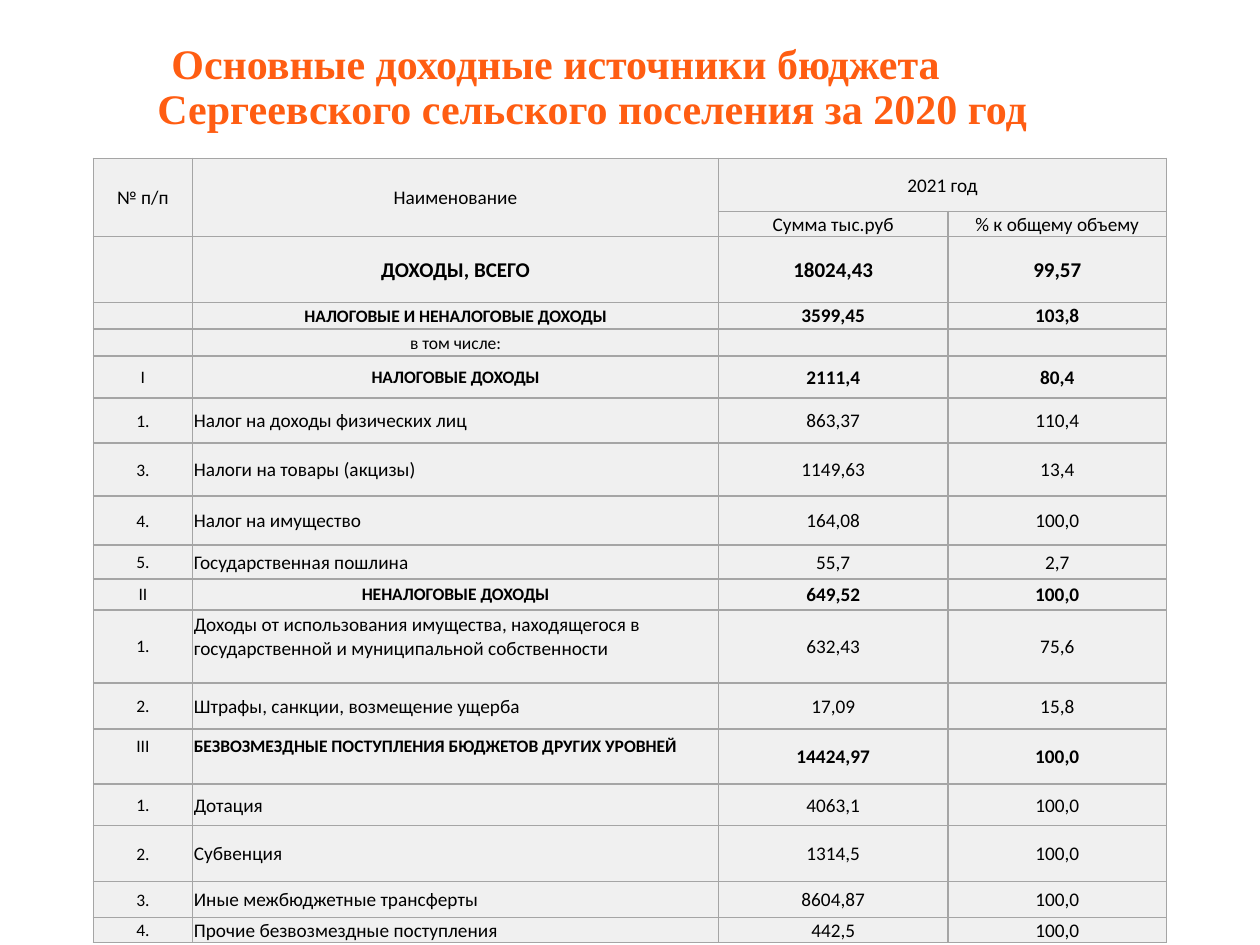
from lxml import etree
from pptx import Presentation
from pptx import util as u
from pptx.dml.color import RGBColor
from pptx.enum import text
from pptx.oxml import ns

ORANGE = RGBColor(0xFF, 0x5D, 0x12)
BLACK = RGBColor(0, 0, 0)
CELL_GREY = RGBColor(0xF0, 0xF0, 0xF0)
BORDER_GREY = RGBColor(0xA5, 0xA5, 0xA5)
LEFT, CENTER = text.PP_ALIGN.LEFT, text.PP_ALIGN.CENTER

COLUMN_WIDTHS = [56.8, 300.5, 131.2, 124.9]
HEADER_HEIGHTS = [30.3, 14.3]

# kind: (name size, value size, bold, name alignment)
KINDS = {
    "total": (12, 12, True, CENTER),
    "group": (10, 11, True, CENTER),
    "note": (10, 10, False, CENTER),
    "section": (10, 11, True, LEFT),
    "item": (11, 11, False, LEFT),
}

# kind, row height, number, name, sum, percentage
INCOME = [
    ("total", 37.7, "", "ДОХОДЫ, ВСЕГО", "18024,43", "99,57"),
    ("group", 15.4, "", "НАЛОГОВЫЕ И НЕНАЛОГОВЫЕ ДОХОДЫ", "3599,45", "103,8"),
    ("note", 15.4, "", "в том числе:", "", ""),
    ("group", 24, "I", "НАЛОГОВЫЕ ДОХОДЫ", "2111,4", "80,4"),
    ("item", 25.7, "1.", "Налог на доходы физических лиц", "863,37", "110,4"),
    ("item", 30.3, "3.", "Налоги на товары (акцизы)", "1149,63", "13,4"),
    ("item", 28, "4.", "Налог на имущество", "164,08", "100,0"),
    ("item", 19.4, "5.", "Государственная пошлина", "55,7", "2,7"),
    ("group", 17.7, "II", "НЕНАЛОГОВЫЕ ДОХОДЫ", "649,52", "100,0"),
    ("item", 41.7, "1.", "Доходы от использования имущества, находящегося в "
     "государственной и муниципальной собственности", "632,43", "75,6"),
    ("item", 26.3, "2.", "Штрафы, санкции, возмещение ущерба", "17,09", "15,8"),
    ("section", 31.4, "III", "БЕЗВОЗМЕЗДНЫЕ ПОСТУПЛЕНИЯ БЮДЖЕТОВ ДРУГИХ УРОВНЕЙ",
     "14424,97", "100,0"),
    ("item", 24, "1.", "Дотация", "4063,1", "100,0"),
    ("item", 32, "2.", "Субвенция", "1314,5", "100,0"),
    ("item", 20.6, "3.", "Иные межбюджетные трансферты", "8604,87", "100,0"),
    ("item", 14.3, "4.", "Прочие безвозмездные поступления", "442,5", "100,0"),
]
# (row, column) of cells whose text sits above the middle
RAISED = {(11, 1), (13, 0), (13, 1)}


class Deck:
    title_font = "Times New Roman"
    body_font = "Calibri"

    def __init__(self, prs):
        self.s = prs.slides.add_slide(prs.slide_layouts[6])

    def run(self, p, content, font, size, color, bold=False):
        r = p.add_run()
        r.text = content
        r.font.name, r.font.size, r.font.bold = font, u.Pt(size), bold
        r.font.color.rgb = color

    def title(self, left, top, width, height, content, first_indent):
        tf = self.s.shapes.add_textbox(*map(u.Pt, (left, top, width, height))).text_frame
        tf.word_wrap = True
        tf.margin_left = 0
        p = tf.paragraphs[0]
        p.alignment, p.line_spacing = LEFT, 0.9
        p._p.get_or_add_pPr().set("indent", str(u.Pt(first_indent)))
        self.run(p, content, self.title_font, 24, ORANGE, True)

    def table(self, left, top, widths, heights):
        """Add a plain table with every cell filled and bordered."""
        frame = self.s.shapes.add_table(len(heights), len(widths), *map(
            u.Pt, (left, top, sum(widths), sum(heights))))
        table = frame.table
        table.first_row = table.horz_banding = False
        for column, width in zip(table.columns, widths):
            column.width = u.Pt(width)
        for row, height in zip(table.rows, heights):
            row.height = u.Pt(height)
        for cell in table.iter_cells():
            self.borders(cell)
            cell.fill.solid()
            cell.fill.fore_color.rgb = CELL_GREY
            cell.vertical_anchor = text.MSO_ANCHOR.MIDDLE
            cell.margin_left = cell.margin_right = cell.margin_top = u.Pt(0.7)
            cell.margin_bottom = 0
        return table

    def borders(self, cell):
        tc_pr = cell._tc.get_or_add_tcPr()
        for side in ("lnL", "lnR", "lnT", "lnB"):
            line = etree.SubElement(tc_pr, ns.qn("a:" + side), w=str(u.Pt(1)))
            fill = etree.SubElement(line, ns.qn("a:solidFill"))
            etree.SubElement(fill, ns.qn("a:srgbClr"), val=str(BORDER_GREY))

    def cell_text(self, cell, content, size=11, bold=False, align=CENTER):
        p = cell.text_frame.paragraphs[0]
        p.alignment = align
        if content:
            self.run(p, content, self.body_font, size, BLACK, bold)
        else:  # keeps an empty cell from stretching its row
            end = etree.SubElement(p._p, ns.qn("a:endParaRPr"))
            end.set("sz", str(size * 100))


def main():
    prs = Presentation()
    prs.slide_width, prs.slide_height = u.Pt(720), u.Pt(540)
    deck = Deck(prs)
    deck.title(90, 21, 565, 465, "Основные доходные источники бюджета "
               "Сергеевского сельского поселения за 2020 год", 8)

    heights = HEADER_HEIGHTS + [row[1] for row in INCOME]
    table = deck.table(53.3, 90.5, COLUMN_WIDTHS, heights)
    for first, last in (((0, 0), (1, 0)), ((0, 1), (1, 1)), ((0, 2), (0, 3))):
        table.cell(*first).merge(table.cell(*last))
    headers = {(0, 0): "№ п/п", (0, 1): "Наименование", (0, 2): "2021 год",
               (1, 2): "Сумма тыс.руб", (1, 3): "% к общему объему"}
    for position, content in headers.items():
        deck.cell_text(table.cell(*position), content)

    for i, (kind, _, number, name, *values) in enumerate(INCOME, len(HEADER_HEIGHTS)):
        name_size, value_size, bold, align = KINDS[kind]
        deck.cell_text(table.cell(i, 0), number, 10)
        deck.cell_text(table.cell(i, 1), name, name_size, bold, align)
        for j, value in enumerate(values, 2):
            deck.cell_text(table.cell(i, j), value, value_size, bold)
    for position in RAISED:
        table.cell(*position).margin_bottom = u.Pt(12)

    prs.save("out.pptx")


if __name__ == "__main__":
    main()
